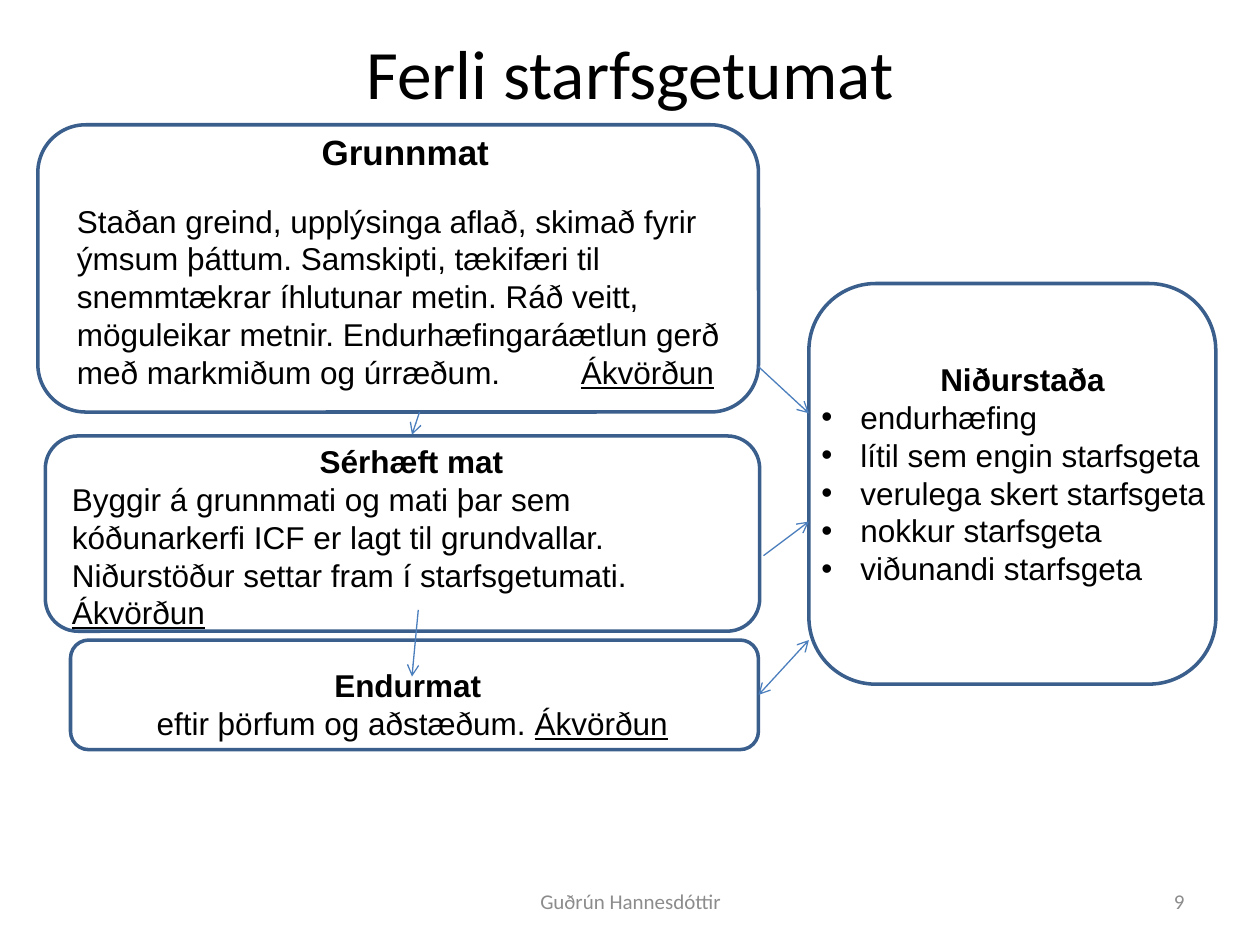
from lxml import etree
from pptx import Presentation
from pptx import util as u
from pptx.dml.color import RGBColor
from pptx.enum import shapes, text
from pptx.oxml.ns import qn

COLORS = {"text": "000000", "muted": "8C8C8C", "outline": "3A5F8C", "arrow": "4B7EBC"}
COLUMNS, ROWS = 100, 75
LEFT, CENTER, RIGHT = text.PP_ALIGN.LEFT, text.PP_ALIGN.CENTER, text.PP_ALIGN.RIGHT

presentation = Presentation()
presentation.slide_width, presentation.slide_height = u.Inches(10), u.Inches(7.5)
slide = presentation.slides.add_slide(presentation.slide_layouts[5])


def color(name):
    return RGBColor.from_string(COLORS[name])


def grid(*values):
    steps = (presentation.slide_width / COLUMNS, presentation.slide_height / ROWS)
    return [round(value * steps[index % 2]) for index, value in enumerate(values)]


def within(box, share):
    left, top, width, height = box
    return (left + share[0] * width, top + share[1] * height,
            share[2] * width, share[3] * height)


def format_paragraph(paragraph, align, size, bold=False, font="Arial", ink="text"):
    paragraph.alignment = align
    paragraph.font.name = font
    paragraph.font.size = u.Pt(size)
    paragraph.font.bold = bold
    paragraph.font.color.rgb = color(ink)


def add_frame(box, anchor=text.MSO_ANCHOR.TOP):
    frame = slide.shapes.add_textbox(*grid(*box)).text_frame
    frame.word_wrap = True
    frame.vertical_anchor = anchor
    return frame


def add_decision(paragraph, lead):
    paragraph.add_run().text = lead
    decision = paragraph.add_run()
    decision.text = "Ákvörðun"
    decision.font.underline = True


def add_outline(box):
    shape = slide.shapes.add_shape(shapes.MSO_SHAPE.ROUNDED_RECTANGLE, *grid(*box))
    shape.shadow.inherit = False
    shape.fill.background()
    shape.line.color.rgb = color("outline")
    shape.line.width = u.Pt(2)
    return shape


def add_title(box, wording):
    title = slide.shapes.title
    title.left, title.top, title.width, title.height = grid(*box)
    frame = title.text_frame
    frame.text = wording
    frame.auto_size = text.MSO_AUTO_SIZE.NONE
    frame.vertical_anchor = text.MSO_ANCHOR.MIDDLE
    format_paragraph(frame.paragraphs[0], CENTER, 39.6, font="Calibri")


def add_basic_assessment(box):
    add_outline(box)
    heading = add_frame(within(box, (0.13, 0, 0.76, 0.19))).paragraphs[0]
    heading.text = "Grunnmat"
    format_paragraph(heading, CENTER, 20, bold=True)
    body = add_frame(within(box, (0.037, 0.246, 1, 0.75))).paragraphs[0]
    add_decision(body, "Staðan greind, upplýsinga aflað, skimað fyrir ýmsum þáttum. "
                 "Samskipti, tækifæri til snemmtækrar íhlutunar metin. Ráð veitt, "
                 "möguleikar metnir. Endurhæfingaráætlun gerð með markmiðum og úrræðum. \t")
    stops = etree.SubElement(body._p.get_or_add_pPr(), qn("a:tabLst"))
    etree.SubElement(stops, qn("a:tab"), pos=str(u.Inches(4)), algn="l")
    format_paragraph(body, LEFT, 18)


def add_stage(box, share, heading, lead, align):
    outline = add_outline(box)
    frame = add_frame(within(box, share))
    frame.text = heading
    format_paragraph(frame.paragraphs[0], CENTER, 18, bold=True)
    body = frame.add_paragraph()
    add_decision(body, lead)
    format_paragraph(body, align, 18)
    return outline


def add_results(box, heading, results):
    add_outline(box)
    frame = add_frame(within(box, (0, 0.176, 1.05, 0.6)))
    frame.text = heading
    format_paragraph(frame.paragraphs[0], CENTER, 18, bold=True)
    for result in results:
        paragraph = frame.add_paragraph()
        paragraph.text = result
        properties = paragraph._p.get_or_add_pPr()
        properties.set("marL", str(u.Inches(0.31)))
        properties.set("indent", str(u.Inches(-0.31)))
        etree.SubElement(properties, qn("a:buFont"), typeface="Arial")
        etree.SubElement(properties, qn("a:buChar"), char="•")
        format_paragraph(paragraph, LEFT, 18)


def add_arrow(start, end, heads=("tailEnd",)):
    connector = slide.shapes.add_connector(
        shapes.MSO_CONNECTOR.STRAIGHT, *grid(*start, *end))
    connector.line.color.rgb = color("arrow")
    connector.line.width = u.Pt(0.75)
    line = connector.line._get_or_add_ln()
    for head in heads:
        etree.SubElement(line, qn(f"a:{head}"), type="arrow")
    etree.SubElement(connector._element.spPr, qn("a:effectLst"))
    return connector


def add_footer(box, wording, align):
    frame = add_frame(box, text.MSO_ANCHOR.MIDDLE)
    frame.text = wording
    format_paragraph(frame.paragraphs[0], align, 12, font="Calibri", ink="muted")


def main():
    add_title((5, 3, 90, 5.4), "Ferli starfsgetumat")
    add_footer((34.2, 69.5, 31.7, 4), "Guðrún Hannesdóttir", CENTER)
    add_footer((71.7, 69.5, 23.3, 4), "9", RIGHT)
    add_basic_assessment((3, 9.9, 57.2, 22.8))
    add_stage((3.6, 34.6, 56.7, 15.5), (0.02, 0, 0.985, 1), "Sérhæft mat",
              "Byggir á grunnmati og mati þar sem kóðunarkerfi ICF er lagt til "
              "grundvallar. Niðurstöður settar fram í starfsgetumati. ", LEFT)
    review = add_stage((5.6, 50.8, 54.6, 8.7), (0.035, 0.18, 0.923, 0.82),
                       "Endurmat ", "eftir þörfum og aðstæðum. ", CENTER)
    add_results((64.2, 22.5, 32.3, 31.8), "Niðurstaða",
                ("endurhæfing", "lítil sem engin starfsgeta", "verulega skert starfsgeta",
                 "nokkur starfsgeta", "viðunandi starfsgeta"))
    for start, end in (((33.3, 32.7), (32.7, 34.5)), ((60.2, 29.1), (64.2, 32.8)),
                       ((33.2, 48.4), (32.7, 53.7)), ((60.6, 44.1), (64.2, 41.4))):
        add_arrow(start, end)
    exchange = add_arrow((60.2, 55.1), (64.2, 50.8), ("headEnd", "tailEnd"))
    exchange.begin_connect(review, 3)
    presentation.save("out.pptx")


if __name__ == "__main__":
    main()
